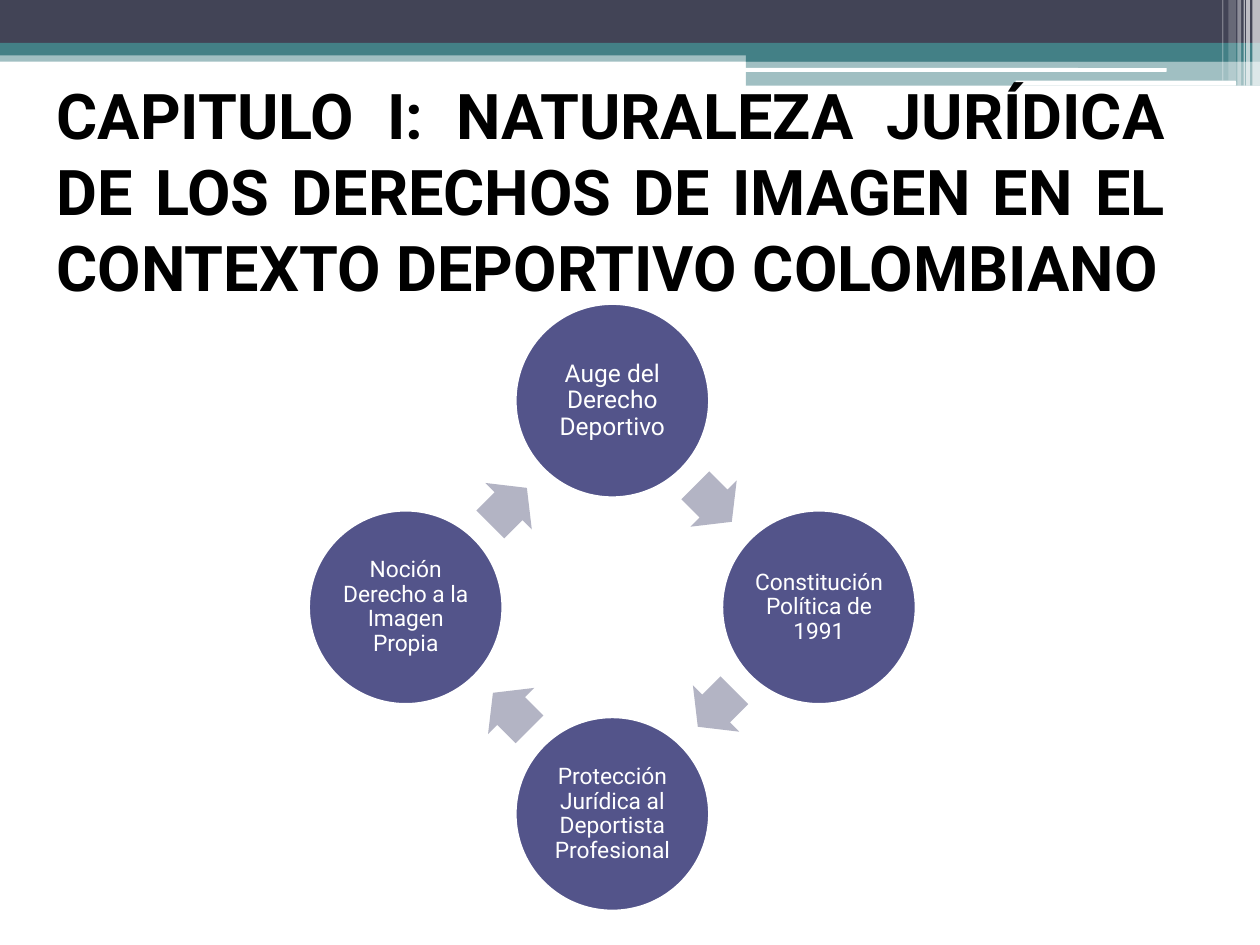
from dataclasses import dataclass
from math import cos, radians, sin

from lxml import etree
from pptx import Presentation
from pptx import util as u
from pptx.dml.color import RGBColor
from pptx.enum import shapes, text
from pptx.oxml.ns import qn

WIDTH, HEIGHT = u.Inches(10), u.Inches(7.5)
COLUMN, ROW = WIDTH / 10, HEIGHT / 7.5
FONT = "Roboto"
COLORS = {
    "dark": "424456",
    "teal": "438086",
    "white": "FFFFFF",
    "black": "000000",
    "node": "53548A",
    "arrow": "B3B4C4",
}
RING_X, RING_Y, RING_RADIUS = 4.86, 4.82, 1.64
NODE_SIZE = 1.54
ARROW_LENGTH, ARROW_WIDTH = 0.41, 0.52
ARROW_RADIUS, ARROW_ANGLE = 1.15, -45.7


@dataclass(frozen=True)
class Band:
    left: float
    top: float
    width: float
    height: float
    color: str = "white"
    opacity: int = 100
    rounded: bool = False


@dataclass(frozen=True)
class Node:
    label: str
    size: int = 13


BANDS = [
    Band(0, 0.4, 10, 0.09, "teal", 50),
    Band(0, 0, 10, 0.34, "dark"),
    Band(0, 0.34, 10, 0.1, "teal"),
    Band(5.92, 0.39, 4.08, 0.1, "teal"),
    Band(5.92, 0.48, 4.08, 0.2, "teal", 50),
    Band(5.91, 0.54, 3.35, 0.03, rounded=True),
    Band(8.06, 0.64, 1.75, 0.04, rounded=True),
    Band(9.94, 0, 0.06, 0.68, opacity=65),
    Band(9.89, 0, 0.03, 0.68, opacity=65),
    Band(9.87, 0, 0.01, 0.68, opacity=60),
    Band(9.82, 0, 0.03, 0.68, opacity=40),
    Band(9.75, 0, 0.06, 0.64, opacity=20),
    Band(9.7, 0, 0.01, 0.64, opacity=30),
]
NODES = [
    Node("Auge del Derecho Deportivo", 14),
    Node("Constitución Política de 1991"),
    Node("Protección Jurídica al Deportista Profesional"),
    Node("Noción Derecho a la Imagen Propia"),
]


def color(name: str) -> RGBColor:
    return RGBColor.from_string(COLORS[name])


def place(shape, left: float, top: float, width: float, height: float) -> None:
    shape.left, shape.width = round(left * COLUMN), round(width * COLUMN)
    shape.top, shape.height = round(top * ROW), round(height * ROW)


def add_filled(slide, kind, left: float, top: float, width: float, height: float, fill: str):
    shape = slide.shapes.add_shape(kind, 0, 0, 0, 0)
    place(shape, left, top, width, height)
    shape.shadow.inherit = False
    shape.fill.solid()
    shape.fill.fore_color.rgb = color(fill)
    shape.line.fill.background()
    return shape


def format_runs(paragraph, size: int, font_color: str, bold: bool = False) -> None:
    for run in paragraph.runs:
        run.font.name = FONT
        run.font.size = u.Pt(size)
        run.font.bold = bold
        run.font.color.rgb = color(font_color)


def add_band(slide, band: Band) -> None:
    kind = shapes.MSO_SHAPE.ROUNDED_RECTANGLE if band.rounded else shapes.MSO_SHAPE.RECTANGLE
    shape = add_filled(slide, kind, band.left, band.top, band.width, band.height, band.color)
    if band.opacity < 100:
        rgb = shape._element.spPr.find(f"{qn('a:solidFill')}/{qn('a:srgbClr')}")
        etree.SubElement(rgb, qn("a:alpha"), val=str(band.opacity * 1000))


def add_title(slide, wording: str) -> None:
    title = slide.shapes.title
    slide.shapes._spTree.append(title._element)
    place(title, 0.35, 0.92, 9, 1.18)
    frame = title.text_frame
    frame.text = wording
    frame.word_wrap = True
    frame.auto_size = text.MSO_AUTO_SIZE.NONE
    frame.vertical_anchor = text.MSO_ANCHOR.MIDDLE
    paragraph = frame.paragraphs[0]
    paragraph.alignment = text.PP_ALIGN.JUSTIFY
    format_runs(paragraph, 36, "black", bold=True)


def ring_corner(angle: float, radius: float, width: float, height: float) -> tuple[float, float]:
    x = RING_X + radius * cos(radians(angle))
    y = RING_Y + radius * sin(radians(angle))
    return x - width / 2, y - height / 2


def add_node(slide, node: Node, angle: float) -> None:
    left, top = ring_corner(angle, RING_RADIUS, NODE_SIZE, NODE_SIZE)
    circle = add_filled(slide, shapes.MSO_SHAPE.OVAL, left, top, NODE_SIZE, NODE_SIZE, "node")
    circle.line.color.rgb = color("white")
    circle.line.width = u.Pt(1.5)
    frame = circle.text_frame
    frame.text = node.label
    frame.word_wrap = True
    frame.vertical_anchor = text.MSO_ANCHOR.MIDDLE
    frame.margin_left = frame.margin_right = u.Inches(0.02)
    frame.margin_top = frame.margin_bottom = u.Inches(0.02)
    paragraph = frame.paragraphs[0]
    paragraph.alignment = text.PP_ALIGN.CENTER
    paragraph.line_spacing = 0.9
    format_runs(paragraph, node.size, "white")


def add_arrow(slide, turn: float) -> None:
    left, top = ring_corner(ARROW_ANGLE + turn, ARROW_RADIUS, ARROW_LENGTH, ARROW_WIDTH)
    arrow = add_filled(
        slide, shapes.MSO_SHAPE.RIGHT_ARROW, left, top, ARROW_LENGTH, ARROW_WIDTH, "arrow"
    )
    arrow.adjustments[0] = 0.6
    arrow.adjustments[1] = 0.5
    arrow.rotation = 45 + turn


def main() -> None:
    presentation = Presentation()
    presentation.slide_width, presentation.slide_height = WIDTH, HEIGHT
    slide = presentation.slides.add_slide(presentation.slide_layouts[5])
    for band in BANDS:
        add_band(slide, band)
    add_title(
        slide,
        "CAPITULO I: NATURALEZA JURÍDICA DE LOS DERECHOS DE IMAGEN "
        "EN EL CONTEXTO DEPORTIVO COLOMBIANO",
    )
    for index, node in enumerate(NODES):
        turn = index * 360 / len(NODES)
        add_node(slide, node, turn - 90)
        add_arrow(slide, turn)
    presentation.save("out.pptx")


if __name__ == "__main__":
    main()
